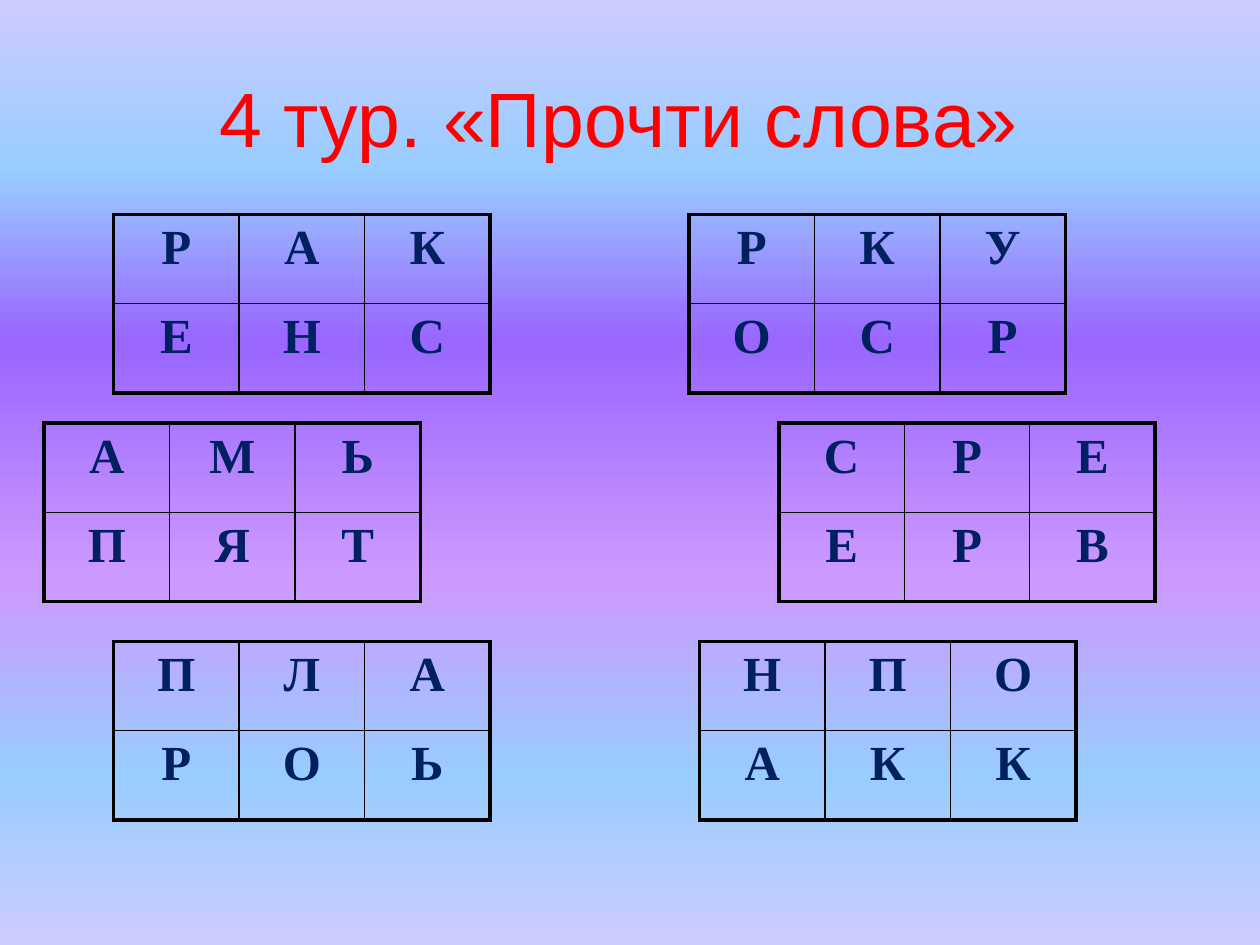
from pptx import Presentation
from pptx import util as u
from pptx.dml.color import RGBColor
from pptx.enum import text
from pptx.oxml import ns
from lxml import etree

RED = RGBColor(0xFF, 0x00, 0x00)
NAVY = RGBColor(0x00, 0x20, 0x60)
BLACK = RGBColor(0x00, 0x00, 0x00)
LILAC = RGBColor(0xCC, 0xCC, 0xFF)
SKY = RGBColor(0x99, 0xCC, 0xFF)
VIOLET = RGBColor(0x99, 0x66, 0xFF)
MAUVE = RGBColor(0xCC, 0x99, 0xFF)

TITLE = "4 тур. «Прочти слова» "
STOPS = [(0, LILAC), (18, SKY), (36, VIOLET),
         (61, MAUVE), (82, SKY), (100, LILAC)]
TOPS = [4.32, 8.53, 12.93]
GRIDS = [
    (2.29, 0, ["РАК", "ЕНС"]),
    (0.89, 1, ["АМЬ", "ПЯТ"]),
    (2.29, 2, ["ПЛА", "РОЬ"]),
    (13.89, 0, ["РКУ", "ОСР"]),
    (15.7, 1, ["СРЕ", "ЕРВ"]),
    (14.1, 2, ["НПО", "АКК"]),
]
WIDE, HIGH = 2.53, 1.8
THICK, THIN = 2.25, 1
HEAD = dict(name="Arial", size=u.Pt(44), bold=False)
LETTER = dict(name="Times New Roman", size=u.Pt(28), bold=True)


def add(node, tag, **attrs):
    return etree.SubElement(node, ns.qn(tag), attrs)


def style(font, form, color):
    for key, val in form.items():
        setattr(font, key, val)
    font.color.rgb = color


def paint(slide):
    fill = slide.background.fill
    fill.gradient()
    fill.gradient_angle = 270
    stops = slide.element.find(".//" + ns.qn("a:gsLst"))
    for old in list(stops):
        stops.remove(old)
    for pos, color in STOPS:
        stop = add(stops, "a:gs", pos=str(pos * 1000))
        add(stop, "a:srgbClr", val=str(color))


def border(cell, sides):
    props = cell._tc.get_or_add_tcPr()
    for spot, (side, outer) in enumerate(sides.items()):
        width = u.Pt(THICK if outer else THIN)
        line = add(props, "a:ln" + side, w=str(width))
        add(add(line, "a:solidFill"), "a:srgbClr", val=str(BLACK))
        props.insert(spot, line)


def write(cell, char):
    cell.fill.background()
    para = cell.text_frame.paragraphs[0]
    para.alignment = text.PP_ALIGN.CENTER
    gap = add(para._p.get_or_add_pPr(), "a:spcBef")
    add(gap, "a:spcPct", val="20000")
    run = para.add_run()
    run.text = char
    style(run.font, LETTER, NAVY)


def draw(slide, left, top, words):
    rows, cols = len(words), len(words[0])
    table = slide.shapes.add_table(
        rows, cols, u.Cm(left), u.Cm(top),
        u.Cm(WIDE * cols), u.Cm(HIGH * rows)).table
    table.first_row = table.horz_banding = False
    for col in table.columns:
        col.width = u.Cm(WIDE)
    for r, word in enumerate(words):
        table.rows[r].height = u.Cm(HIGH)
        for c, char in enumerate(word):
            cell = table.cell(r, c)
            write(cell, char)
            border(cell, dict(L=c == 0, R=c == cols - 1,
                              T=r == 0, B=r == rows - 1))


def main():
    deck = Presentation()
    deck.slide_width, deck.slide_height = u.Cm(25.4), u.Cm(19.05)
    slide = deck.slides.add_slide(deck.slide_layouts[5])
    paint(slide)

    title = slide.shapes.title
    place = dict(left=1.27, top=0.76, width=22.86, height=3.18)
    for key, val in place.items():
        setattr(title, key, u.Cm(val))
    frame = title.text_frame
    frame.text = TITLE
    frame.auto_size = text.MSO_AUTO_SIZE.NONE
    frame.vertical_anchor = text.MSO_ANCHOR.MIDDLE
    para = frame.paragraphs[0]
    para.alignment = text.PP_ALIGN.CENTER
    style(para.runs[0].font, HEAD, RED)

    for left, band, words in GRIDS:
        draw(slide, left, TOPS[band], words)
    deck.save("out.pptx")


if __name__ == "__main__":
    main()
